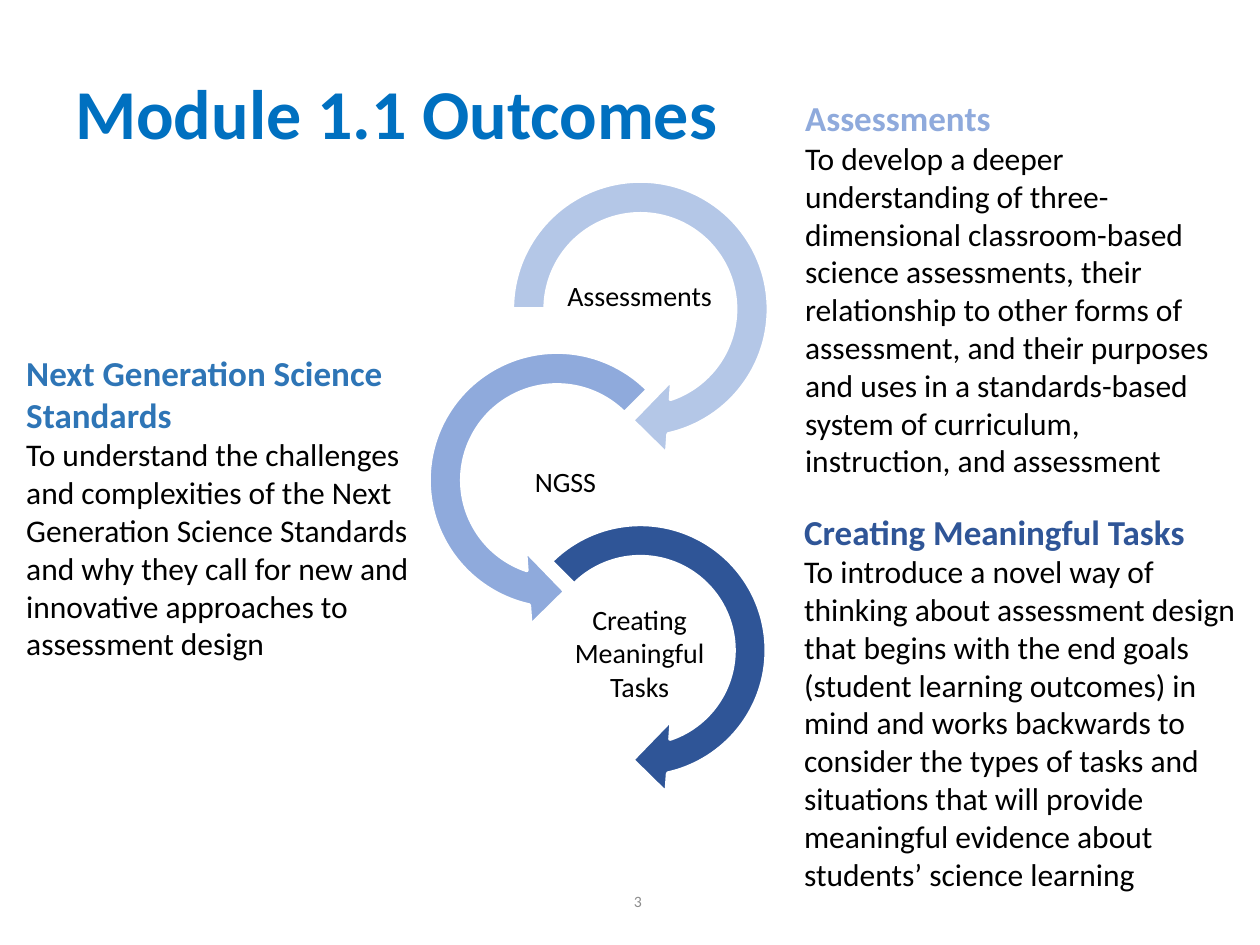
from dataclasses import dataclass

from pptx import Presentation
from pptx.dml.color import RGBColor
from pptx.enum.shapes import MSO_SHAPE as Preset
from pptx.enum.text import MSO_ANCHOR as Anchor, MSO_AUTO_SIZE as AutoSize, PP_ALIGN as Align
from pptx.util import Cm, Pt


@dataclass(frozen=True)
class Theme:
    font: str = "Calibri"
    title: str = "0070C0"
    text: str = "000000"
    muted: str = "8C8C8C"
    line: str = "FFFFFF"
    pale: str = "B4C7E7"
    light: str = "8FAADC"
    medium: str = "2E75B6"
    dark: str = "2F5597"
    title_size: int = 40
    heading_size: int = 20
    body_size: int = 18
    label_size: int = 16
    number_size: int = 9


THEME = Theme()

# Preset, left, top, size, fill, end angle, start angle (angles in 100000ths of the preset's unit)
ARROWS = [
    (Preset.CIRCULAR_ARROW, 9.91, 3.23, 6.0, THEME.pale, 45, 108),
    (Preset.LEFT_CIRCULAR_ARROW, 8.23, 6.68, 6.0, THEME.light, 63, 189),
    (Preset.CIRCULAR_ARROW, 9.96, 10.16, 5.9, THEME.dark, 45, 135),
]

# Lines, box, line spacing
LABELS = [
    (["Assessments"], (11.23, 5.16, 3.33, 1.68), 0.9),
    (["NGSS"], (9.09, 8.64, 4.62, 2.21), 0.9),
    (["Creating Meaningful", "Tasks"], (11.23, 12.32, 3.33, 1.68), 1.0),
]

# Heading lines, heading colour, body, box
OUTCOMES = [
    (["Assessments"], THEME.light,
     "To develop a deeper understanding of three-dimensional classroom-based science "
     "assessments, their relationship to other forms of assessment, and their purposes and "
     "uses in a standards-based system of curriculum, instruction, and assessment",
     (15.98, 1.83, 8.89, 8.03)),
    (["Next Generation Science", "Standards"], THEME.medium,
     "To understand the challenges and complexities of the Next Generation Science Standards "
     "and why they call for new and innovative approaches to assessment design",
     (0.28, 6.96, 8.41, 8.64)),
    (["Creating Meaningful Tasks"], THEME.dark,
     "To introduce a novel way of thinking about assessment design that begins with the end "
     "goals (student learning outcomes) in mind and works backwards to consider the types of "
     "tasks and situations that will provide meaningful evidence about students’ science "
     "learning",
     (15.96, 10.16, 9.44, 8.89)),
]


def style(paragraph, size, color, bold=False):
    for run in paragraph.runs:
        run.font.name = THEME.font
        run.font.size = Pt(size)
        run.font.bold = bold
        run.font.color.rgb = RGBColor.from_string(color)


def add_text(slide, lines, box, size, color, bold=False, align=Align.LEFT,
             anchor=Anchor.MIDDLE, spacing=1.0):
    """Add a wrapped text box with one paragraph per line; return its text frame."""
    text_frame = slide.shapes.add_textbox(*map(Cm, box)).text_frame
    text_frame.word_wrap = True
    text_frame.vertical_anchor = anchor
    text_frame.text = "\n".join(lines)
    for paragraph in text_frame.paragraphs:
        paragraph.alignment = align
        paragraph.line_spacing = spacing
        style(paragraph, size, color, bold)
    return text_frame


def add_arrow(slide, preset, left, top, size, color, end, start):
    shape = slide.shapes.add_shape(preset, Cm(left), Cm(top), Cm(size), Cm(size))
    for index, value in enumerate((0.11, 11.42, end, start, 0.125)):
        shape.adjustments[index] = value
    shape.shadow.inherit = False
    shape.fill.solid()
    shape.fill.fore_color.rgb = RGBColor.from_string(color)
    shape.line.color.rgb = RGBColor.from_string(THEME.line)
    shape.line.width = Pt(2)


def add_label(slide, lines, box, spacing):
    text_frame = add_text(slide, lines, box, THEME.label_size, THEME.text,
                          align=Align.CENTER, spacing=spacing)
    text_frame.margin_left = text_frame.margin_right = Cm(0.03)
    text_frame.margin_top = text_frame.margin_bottom = Cm(0.03)


def add_outcome(slide, heading, color, body, box):
    text_frame = add_text(slide, heading, box, THEME.heading_size, color, bold=True,
                          anchor=Anchor.TOP)
    text_frame.auto_size = AutoSize.SHAPE_TO_FIT_TEXT
    paragraph = text_frame.add_paragraph()
    paragraph.text = body
    style(paragraph, THEME.body_size, THEME.text)


def main():
    presentation = Presentation()
    presentation.slide_width, presentation.slide_height = Cm(25.4), Cm(19.05)
    slide = presentation.slides.add_slide(presentation.slide_layouts[6])

    add_text(slide, ["3"], (7.47, 17.65, 5.72, 1.02), THEME.number_size, THEME.muted,
             align=Align.RIGHT)
    add_text(slide, ["Module 1.1 Outcomes"], (1.27, 0.76, 22.86, 3.18), THEME.title_size,
             THEME.title, bold=True, spacing=0.9)
    for arrow, label in zip(ARROWS, LABELS):
        add_arrow(slide, *arrow)
        add_label(slide, *label)
    for outcome in OUTCOMES:
        add_outcome(slide, *outcome)

    presentation.save("out.pptx")


if __name__ == "__main__":
    main()
